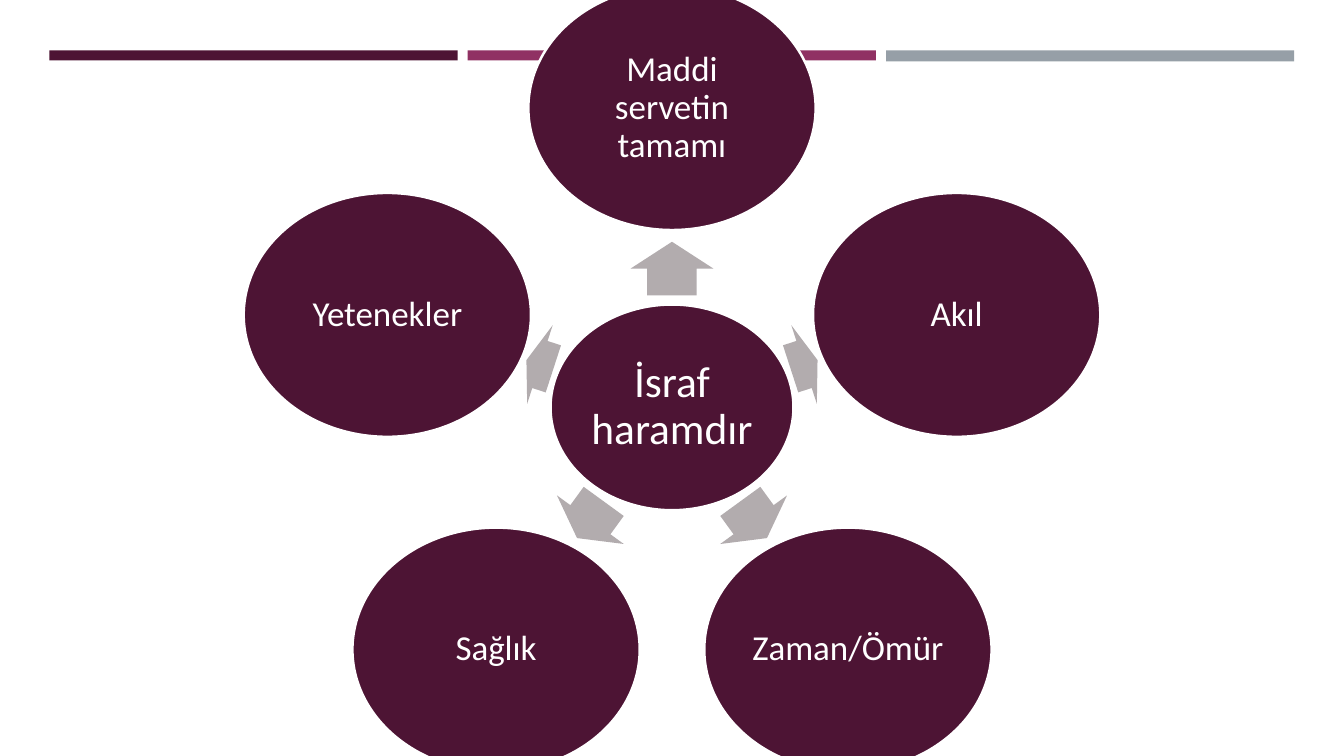
import math
from pptx import Presentation
from pptx import util as u
from pptx.dml import color
from pptx.enum import shapes, text

PLUM, WHITE, ARROW_GREY = "4D1434", "FFFFFF", "B2ACAE"
BARS = [(PLUM, 7.2), ("903163", 7.2), ("969FA7", 7.9)]
BAR_LEFT, BAR_TOP, BAR_WIDTH, BAR_PITCH = 35.3, 36, 291.6, 298.8

CENTER = (480, 291)
HUB = {"label": "İsraf haramdır", "size": (173.5, 146.9), "font": 31, "inset": 2.9}
PETAL = {"size": (205.2, 174.2), "font": 25, "inset": 2.2}
PETALS = [
    ("Maddi servetin tamamı", 38.2),
    ("Akıl", 20.2),
    ("Zaman/Ömür", 32.4),
    ("Sağlık", 32.4),
    ("Yetenekler", 20.2),
]
PETAL_RADIUS, ARROW_RADIUS, ARROW_WIDTH = 213.8, 99.2, 59


def rgb(value):
    return color.RGBColor.from_string(value)


def add_shape(kind, left, top, width, height, fill):
    shape = slide.shapes.add_shape(
        kind, u.Pt(left), u.Pt(top), u.Pt(width), u.Pt(height))
    shape.shadow.inherit = False
    shape.fill.solid()
    shape.fill.fore_color.rgb = rgb(fill)
    shape.line.fill.background()
    return shape


def add_centered(kind, center, size, fill):
    left, top = (c - s / 2 for c, s in zip(center, size))
    return add_shape(kind, left, top, *size, fill)


def add_ellipse(label, center, size, font, inset):
    shape = add_centered(shapes.MSO_SHAPE.OVAL, center, size, PLUM)
    shape.line.color.rgb = rgb(WHITE)
    shape.line.width = u.Pt(1.75)
    frame = shape.text_frame
    frame.word_wrap = True
    frame.vertical_anchor = text.MSO_ANCHOR.MIDDLE
    frame.margin_left = frame.margin_right = u.Pt(inset)
    frame.margin_top = frame.margin_bottom = u.Pt(inset)
    paragraph = frame.paragraphs[0]
    paragraph.alignment = text.PP_ALIGN.CENTER
    paragraph.line_spacing = 0.9
    run = paragraph.add_run()
    run.text = label
    run.font.name = "Calibri"
    run.font.size = u.Pt(font)
    run.font.color.rgb = rgb(WHITE)


def around_center(radius, degrees):
    angle = math.radians(degrees)
    return (CENTER[0] + radius * math.cos(angle),
            CENTER[1] + radius * math.sin(angle))


presentation = Presentation()
presentation.slide_width = u.Pt(960)
presentation.slide_height = u.Pt(540)
slide = presentation.slides.add_slide(presentation.slide_layouts[6])

for index, (fill, height) in enumerate(BARS):
    add_shape(shapes.MSO_SHAPE.RECTANGLE, BAR_LEFT + index * BAR_PITCH,
              BAR_TOP, BAR_WIDTH, height, fill)

add_ellipse(center=CENTER, **HUB)
for index, (label, arrow_length) in enumerate(PETALS):
    degrees = (270 + index * 360 / len(PETALS)) % 360
    arrow = add_centered(
        shapes.MSO_SHAPE.RIGHT_ARROW, around_center(ARROW_RADIUS, degrees),
        (arrow_length, ARROW_WIDTH), ARROW_GREY)
    arrow.adjustments[0] = 0.6
    arrow.adjustments[1] = 0.5
    arrow.rotation = degrees
    add_ellipse(label, around_center(PETAL_RADIUS, degrees), **PETAL)

presentation.save("out.pptx")
